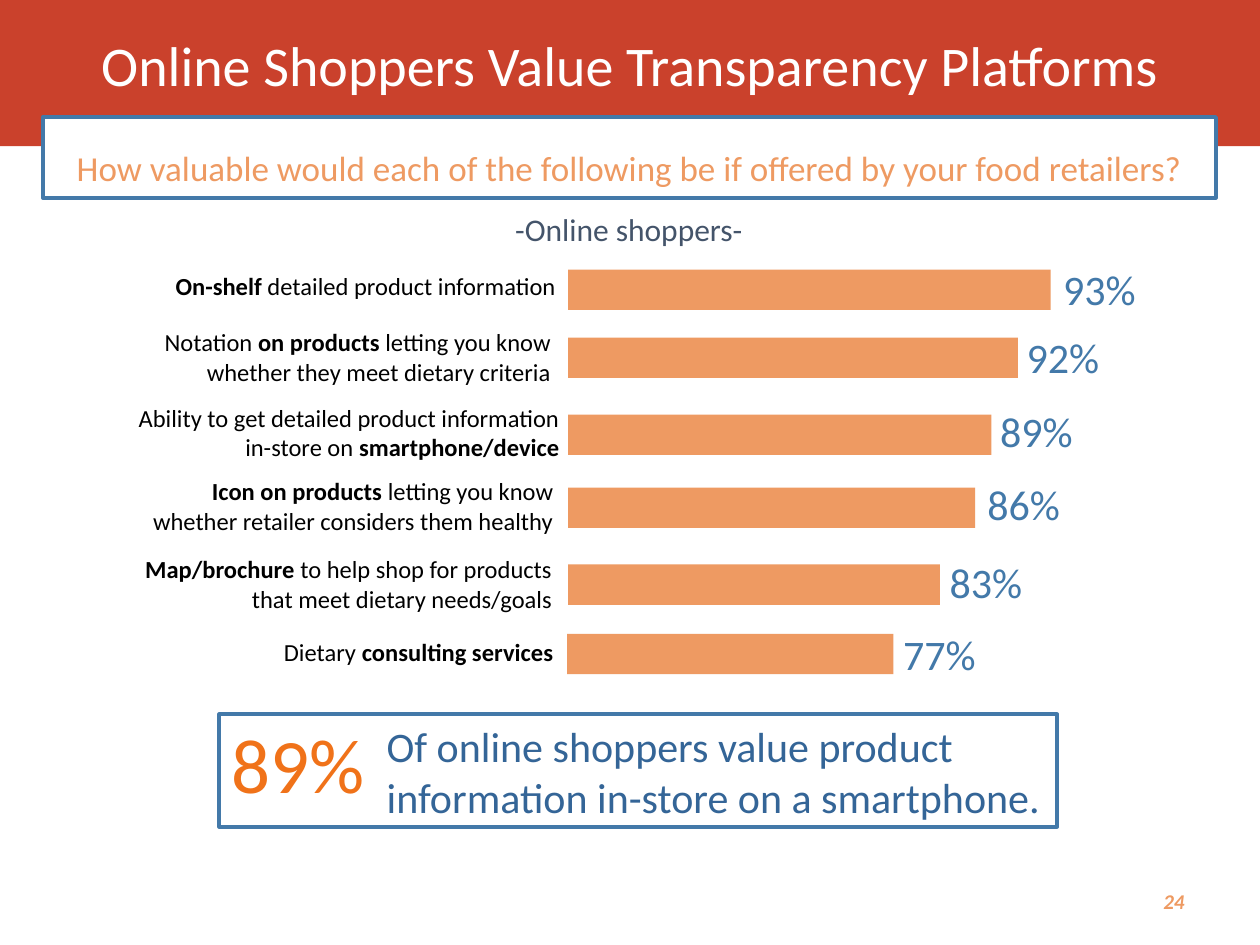
import dataclasses

import pptx
import pptx.dml.color
import pptx.enum.shapes
import pptx.enum.text
import pptx.util

ALIGN = pptx.enum.text.PP_ALIGN
ANCHOR = pptx.enum.text.MSO_ANCHOR
EMU_PER_PX = 9144  # 100 px to the inch


@dataclasses.dataclass(frozen=True)
class Theme:
    font: str = "Calibri"
    red: str = "CA412C"
    peach: str = "EE9A62"
    orange: str = "F07219"
    blue: str = "4379A9"
    deep_blue: str = "346597"
    slate: str = "44546A"
    black: str = "000000"
    white: str = "FFFFFF"
    title: int = 32
    question: int = 20
    subtitle: int = 18
    label: int = 14
    figure: int = 24
    big_figure: int = 44
    page: int = 12
    frame: float = 2.25


THEME = Theme()


@dataclasses.dataclass(frozen=True)
class Row:
    """One bar; its tops are relative to the bar list."""
    label: tuple  # (text, bold) runs
    label_box: tuple
    bar_box: tuple
    value: str
    value_at: tuple


BAR_HEIGHT, VALUE_SIZE = 32, (113, 57)
ROWS = [
    Row((("On-shelf", True), (" detailed product information", False)),
        (125, 7, 326, 34), (451, 11, 383), "93%", (816, 0)),
    Row((("Notation ", False), ("on products ", True),
         ("letting you know whether they meet dietary criteria", False)),
        (79, 52, 368, 57), (451, 65, 357), "92%", (787, 54)),
    Row((("Ability to get detailed product information in-store on ", False),
         ("smartphone/device", True)),
        (86, 112, 368, 57), (451, 126, 336), "89%", (766, 113)),
    Row((("Icon on products ", True),
         ("letting you know whether retailer considers them healthy", False)),
        (101, 170, 348, 57), (451, 184, 323), "86%", (756, 171)),
    Row((("Map/brochure ", True),
         ("to help shop for products that meet dietary needs/goals", False)),
        (100, 232, 348, 57), (451, 245, 295), "83%", (726, 233)),
    Row((("Dietary ", False), ("consulting services", True)),
        (101, 298, 348, 34), (450, 300, 259), "77%", (689, 290)),
]


def px(length):
    return pptx.util.Emu(length * EMU_PER_PX)


def rgb(color):
    return pptx.dml.color.RGBColor.from_string(color)


def write(shape, runs, size, color, align=ALIGN.LEFT, anchor=ANCHOR.TOP,
          wrap=True, spacing=None):
    """Fill a shape with one paragraph, from a string or (text, bold) runs."""
    frame = shape.text_frame
    frame.word_wrap = wrap
    frame.vertical_anchor = anchor
    paragraph = frame.paragraphs[0]
    paragraph.alignment = align
    if spacing:
        paragraph.line_spacing = spacing
    paragraph.font.name = THEME.font
    paragraph.font.size = pptx.util.Pt(size)
    paragraph.font.color.rgb = rgb(color)
    if isinstance(runs, str):
        paragraph.add_run().text = runs
    else:
        for text, bold in runs:
            run = paragraph.add_run()
            run.text = text
            run.font.bold = bold
    return paragraph


def add_text(slide, box, runs, size, color, **layout):
    shape = slide.shapes.add_textbox(*map(px, box))
    return write(shape, runs, size, color, **layout)


def add_rectangle(slide, box, fill=None, line=None):
    shape = slide.shapes.add_shape(
        pptx.enum.shapes.MSO_SHAPE.RECTANGLE, *map(px, box))
    shape.shadow.inherit = False
    if fill:
        shape.fill.solid()
        shape.fill.fore_color.rgb = rgb(fill)
    else:
        shape.fill.background()
    if line:
        shape.line.color.rgb = rgb(line)
        shape.line.width = pptx.util.Pt(THEME.frame)
    else:
        shape.line.fill.background()
    return shape


def add_header(slide, left, top, width, height):
    add_rectangle(slide, (left, top, width, height), THEME.red)
    question = add_rectangle(slide, (left + 34, top + 93, width - 69, 64),
                             THEME.white, THEME.blue)
    write(question, "How valuable would each of the following be if offered "
          "by your food retailers?", THEME.question, THEME.peach,
          align=ALIGN.CENTER, anchor=ANCHOR.MIDDLE,
          spacing=pptx.util.Pt(36))
    add_text(slide, (left, top + 25, width, 59),
             "Online Shoppers Value Transparency Platforms",
             THEME.title, THEME.white, align=ALIGN.CENTER, spacing=0.9)


def add_bar_list(slide, left, top, rows):
    for row in rows:
        x, y, width = row.bar_box
        add_rectangle(slide, (left + x, top + y, width, BAR_HEIGHT),
                      THEME.peach)
        x, y, width, height = row.label_box
        add_text(slide, (left + x, top + y, width, height), row.label,
                 THEME.label, THEME.black, align=ALIGN.RIGHT)
        x, y = row.value_at
        add_text(slide, (left + x, top + y, *VALUE_SIZE), row.value,
                 THEME.figure, THEME.blue, align=ALIGN.CENTER,
                 anchor=ANCHOR.MIDDLE, spacing=0.9)


def add_callout(slide, left, top, width, height):
    add_rectangle(slide, (left, top, width, height), line=THEME.blue)
    add_text(slide, (left, top - 3, 127, 84), "89%",
             THEME.big_figure, THEME.orange, wrap=False)
    add_text(slide, (left + 123, top, width - 123, height + 2),
             "Of online shoppers value product information in-store "
             "on a smartphone.", THEME.figure, THEME.deep_blue)


def add_page_number(slide, box, number):
    paragraph = add_text(slide, box, number, THEME.page, THEME.peach,
                         align=ALIGN.RIGHT, anchor=ANCHOR.MIDDLE)
    paragraph.font.bold = True
    paragraph.font.italic = True


def main():
    presentation = pptx.Presentation()
    presentation.slide_width, presentation.slide_height = px(1000), px(750)
    slide = presentation.slides.add_slide(presentation.slide_layouts[6])
    add_header(slide, 0, 0, 1000, 116)
    add_text(slide, (399, 162, 210, 40), "-Online shoppers-",
             THEME.subtitle, THEME.slate, wrap=False)
    add_bar_list(slide, 0, 203, ROWS)
    add_callout(slide, 174, 567, 665, 89)
    add_page_number(slide, (717, 695, 233, 40), "24")
    presentation.save("out.pptx")


if __name__ == "__main__":
    main()
